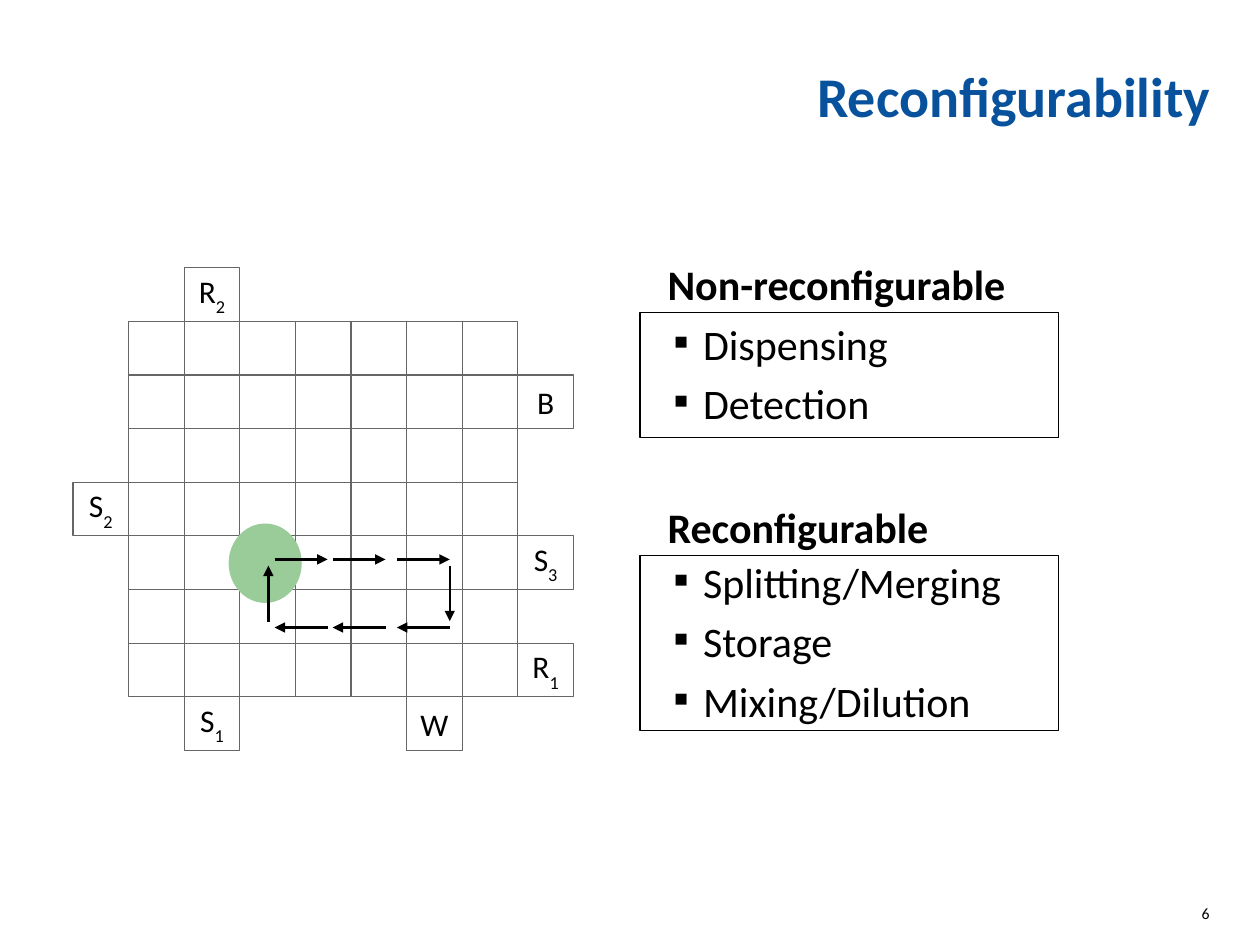
from dataclasses import dataclass

from lxml.etree import SubElement
from pptx import Presentation
from pptx.dml.color import RGBColor as RGB
from pptx.enum.shapes import MSO_CONNECTOR as CONN, MSO_SHAPE as SHAPE
from pptx.enum.text import MSO_ANCHOR as ANCHOR, PP_ALIGN as ALIGN
from pptx.oxml.ns import qn
from pptx.util import Pt

PX = 9144  # EMU per px, 100 px to the inch


@dataclass(frozen=True)
class Theme:
    font: str = "Calibri"
    blue: RGB = RGB(0x08, 0x51, 0x9C)
    black: RGB = RGB(0, 0, 0)
    grey: RGB = RGB(0x66, 0x66, 0x66)
    green: RGB = RGB(0x99, 0xCC, 0x99)
    title: int = 32
    body: int = 24
    label: int = 18
    page: int = 9


T = Theme()

# Electrode array: 7 by 7 cells
SIDE = 7
LEFT, TOP = 102, 255
WIDE, HIGH = 309, 298

# Ports: column, row, letter, subscript
PORTS = [
    (-1, 3, "S", "2"),
    (1, -1, "R", "2"),
    (7, 1, "B", ""),
    (7, 4, "S", "3"),
    (1, 7, "S", "1"),
    (5, 7, "W", ""),
    (7, 6, "R", "1"),
]

# Mixing loop
STEPS = [(218, 260), (264, 306), (315, 357)]
UPPER, LOWER = 444, 498

# Operation lists: heading, top of frame, height of frame, items
LISTS = [
    ("Non-reconfigurable", 248, 99, ["Dispensing", "Detection"]),
    ("Reconfigurable", 441, 139,
     ["Splitting/Merging", "Storage", "Mixing/Dilution"]),
]


def px(*nums):
    return [round(n * PX) for n in nums]


def style(font, size, color=T.black, bold=False):
    font.name, font.size, font.bold = T.font, Pt(size), bold
    font.color.rgb = color


def inset(frame, x=0, y=0):
    frame.margin_left = frame.margin_right = x * PX
    frame.margin_top = frame.margin_bottom = y * PX


def add_box(shapes, kind, at, line, width, fill=None):
    box = shapes.add_shape(kind, *px(*at))
    box.shadow.inherit = False
    if fill is None:
        box.fill.background()
    else:
        box.fill.solid()
        box.fill.fore_color.rgb = fill
    box.line.color.rgb = line
    box.line.width = Pt(width)
    return box


def add_text(shapes, at, text, size, bold=False, align=ALIGN.LEFT, pad=(0, 0)):
    frame = shapes.add_textbox(*px(*at)).text_frame
    frame.word_wrap = True
    inset(frame, *pad)
    frame.text = text
    para = frame.paragraphs[0]
    para.alignment = align
    style(para.runs[0].font, size, bold=bold)


def add_cell(shapes, col, row):
    at = (LEFT + WIDE * col / SIDE, TOP + HIGH * row / SIDE,
          WIDE / SIDE, HIGH / SIDE)
    cell = add_box(shapes, SHAPE.ROUNDED_RECTANGLE, at, T.grey, 0.71)
    cell.adjustments[0] = 0
    return cell


def add_port(shapes, col, row, name, sub):
    frame = add_cell(shapes, col, row).text_frame
    inset(frame, 10, 5)
    frame.vertical_anchor = ANCHOR.MIDDLE
    para = frame.paragraphs[0]
    para.alignment = ALIGN.CENTER
    for text, base in ((name, 0), (sub, -33000)):
        if text:
            run = para.add_run()
            run.text = text
            style(run.font, T.label)
            if base:
                run._r.get_or_add_rPr().set("baseline", str(base))


def add_arrow(shapes, *ends):
    arrow = shapes.add_connector(CONN.STRAIGHT, *px(*ends))
    arrow.line.color.rgb = T.black
    arrow.line.width = Pt(1.45)
    SubElement(arrow.line._get_or_add_ln(), qn("a:tailEnd"), type="triangle")
    SubElement(arrow._element.spPr, qn("a:effectLst"))


def add_array(shapes):
    group = shapes.add_group_shape().shapes
    for row in range(SIDE):
        for col in range(SIDE):
            add_cell(group, col, row)
    for port in PORTS:
        add_port(group, *port)


def add_mixer(shapes):
    group = shapes.add_group_shape().shapes
    add_box(group, SHAPE.OVAL, (182, 416, 57, 62), T.green, 0.75, T.green)
    for start, end in STEPS:
        add_arrow(group, start, UPPER, end, UPPER)
        add_arrow(group, end, LOWER, start, LOWER)
    add_arrow(group, 213, 494, 213, 449)
    add_arrow(group, 357, 449, 357, 493)


def add_item(para, text, gap):
    para.text = text
    props = para._p.get_or_add_pPr()
    props.set("marL", str(47 * PX))
    props.set("indent", str(-23 * PX))
    para.line_spacing = 0.97
    para.space_before = Pt(gap)
    SubElement(props, qn("a:buSzPct"), val="45000")
    SubElement(props, qn("a:buChar"), char="■")
    style(para.runs[0].font, T.body)


def add_lists(shapes):
    frame = shapes.add_textbox(*px(511, 208, 477, 369)).text_frame
    frame.word_wrap = True
    inset(frame)
    frame.margin_top = 47 * PX
    para = frame.paragraphs[0]
    gap = 0
    for head, top, high, items in LISTS:
        for text in items:
            add_item(para, text, gap)
            gap = 6
            if text != LISTS[-1][-1][-1]:
                para = frame.add_paragraph()
        gap = 74  # room for the next heading
        add_box(shapes, SHAPE.RECTANGLE, (508, top, 332, high), T.black, 0.75)
        add_text(shapes, (520, top - 48, 376, 48), head, T.body, True,
                 pad=(10, 5))


def set_title(title, text):
    title.left, title.top, title.width, title.height = px(39, 0, 922, 102)
    frame = title.text_frame
    frame.text = text
    inset(frame)
    frame.vertical_anchor = ANCHOR.BOTTOM
    para = frame.paragraphs[0]
    para.alignment = ALIGN.RIGHT
    para.line_spacing = 0.8
    style(para.runs[0].font, T.title, T.blue, True)


def main():
    deck = Presentation()
    deck.slide_width, deck.slide_height = px(1000, 750)
    slide = deck.slides.add_slide(deck.slide_layouts[5])
    shapes = slide.shapes
    set_title(shapes.title, "Reconfigurability")
    add_text(shapes, (927, 717, 33, 33), "6", T.page, align=ALIGN.RIGHT)
    add_array(shapes)
    add_mixer(shapes)
    add_lists(shapes)
    deck.save("out.pptx")


if __name__ == "__main__":
    main()
